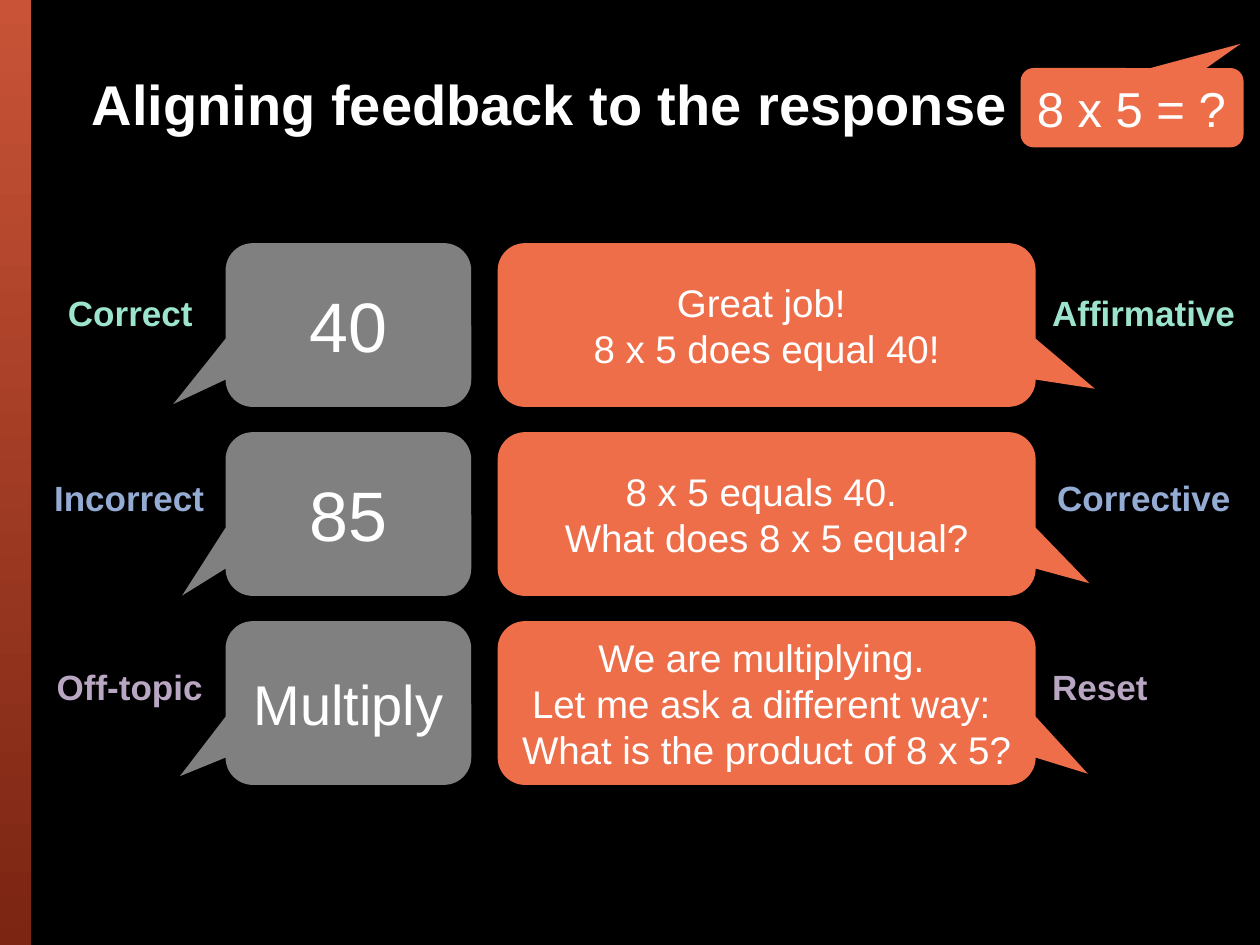
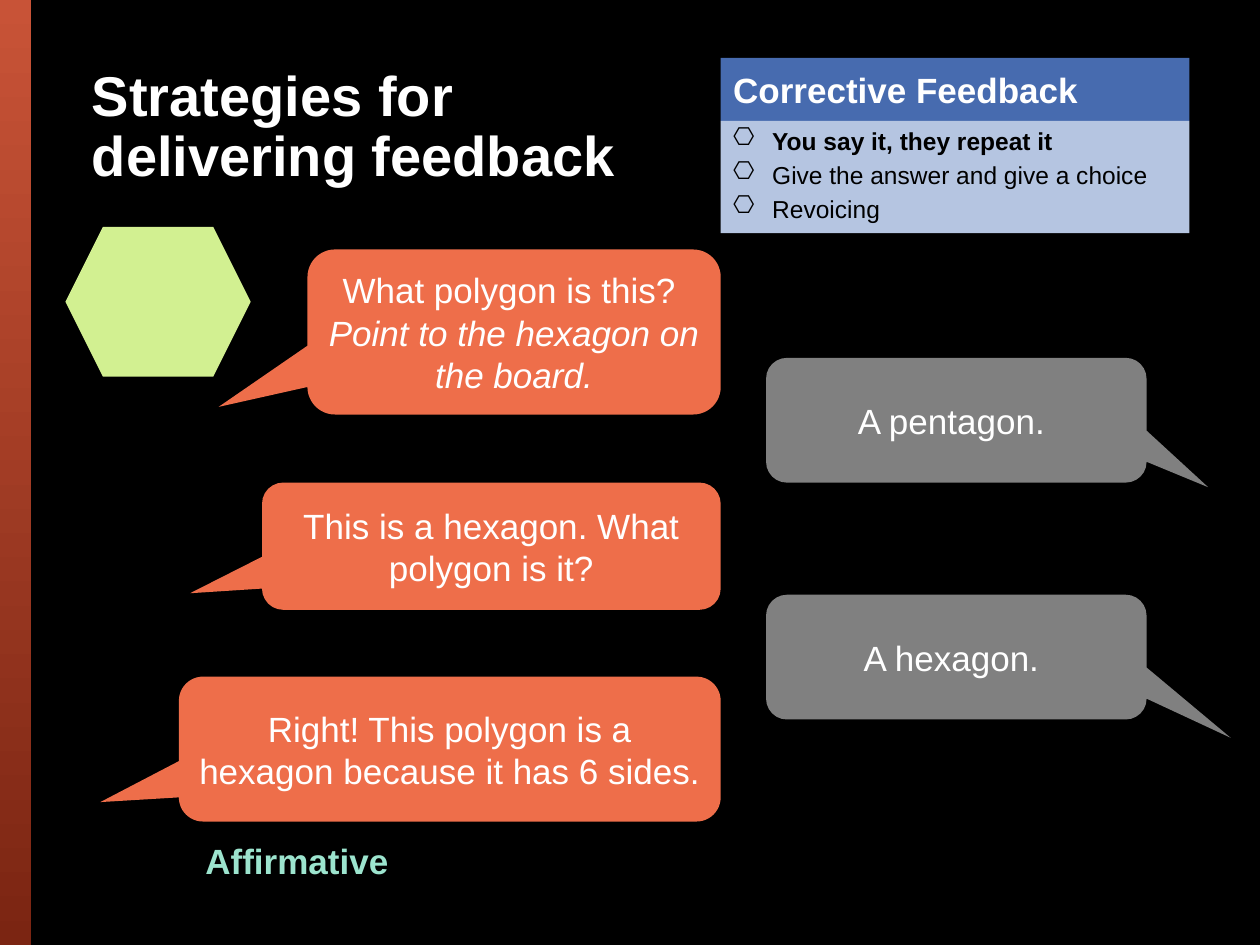
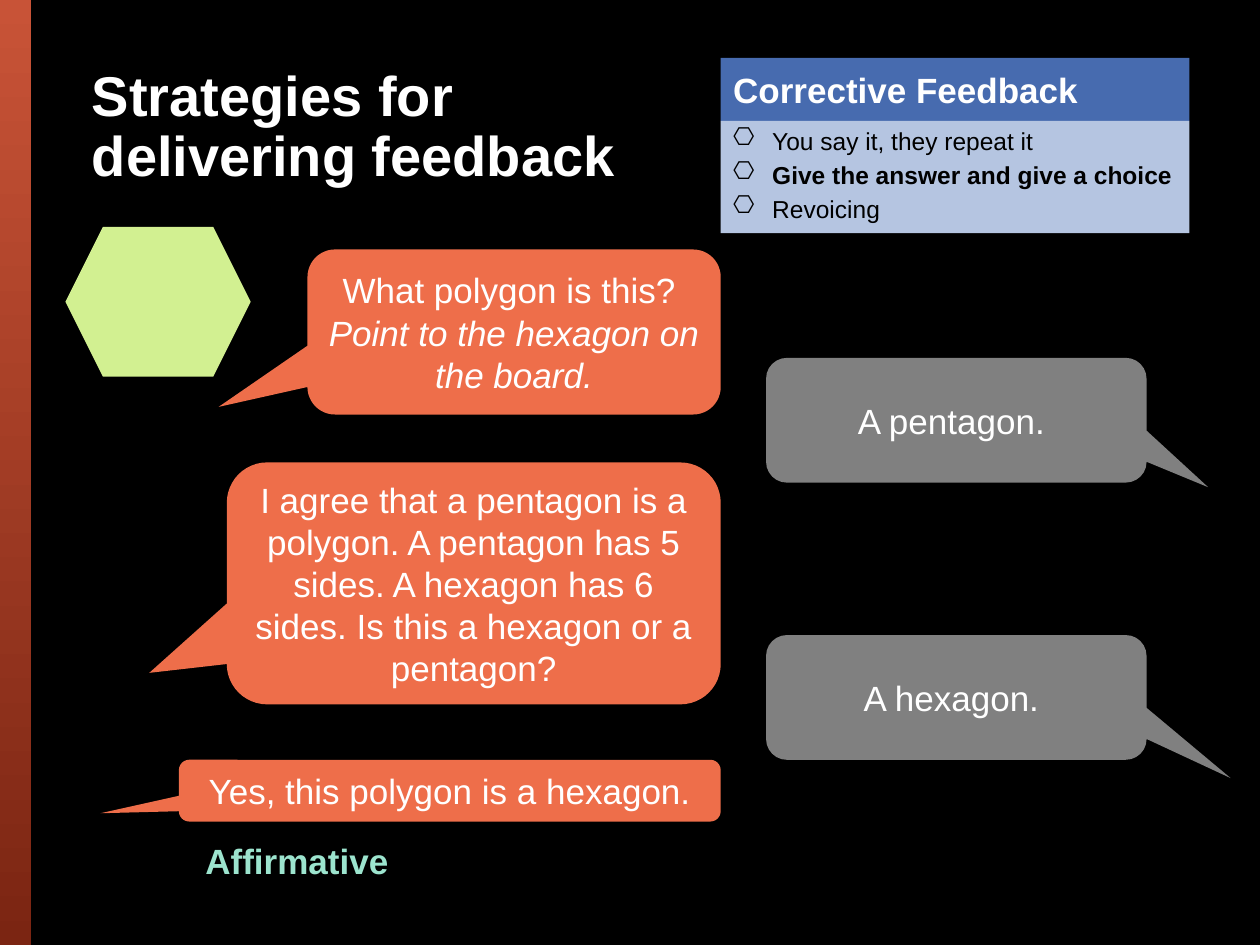
from pptx import Presentation
from pptx.dml.color import RGBColor
from pptx.enum import shapes, text
from pptx.util import Inches, Pt
from lxml import etree

FONT = "Arial"
BLACK, WHITE, GREY = "000000", "FFFFFF", "808080"
CORAL, LIME = "EE6E4A", "D2F091"
MINT, BLUE, LILAC = "9CE4CE", "94ABD4", "B8A6C2"
NAVY, PALE = "476BAF", "B5C5E1"
LEFT, MID = text.PP_ALIGN.LEFT, text.PP_ALIGN.CENTER
CALL = shapes.MSO_SHAPE.ROUNDED_RECTANGULAR_CALLOUT
RECT = shapes.MSO_SHAPE.RECTANGLE
rgb = RGBColor.from_string


def write(frame, words, size=20, color=WHITE, bold=(), italic=(), align=MID,
          space=None, before=0, bullet=None):
    """Fill a frame, one paragraph a line; bold and italic hold line numbers."""
    frame.word_wrap = True
    frame.auto_size = text.MSO_AUTO_SIZE.NONE
    frame.vertical_anchor = text.MSO_ANCHOR.MIDDLE
    for i, line in enumerate(words.split("\n")):
        para = frame.paragraphs[0] if i == 0 else frame.add_paragraph()
        if bullet:
            props = para._p.get_or_add_pPr()
            props.set("marL", str(Inches(0.31)))
            props.set("indent", str(-Inches(0.31)))
            tag = props.nsmap["a"]
            etree.SubElement(props, f"{{{tag}}}buChar", char=bullet)
        para.alignment = align
        if space:
            para.line_spacing = space
        if i and before:
            para.space_before = Pt(before)
        run = para.add_run()
        run.text = line
        font = run.font
        font.name, font.size = FONT, Pt(size)
        font.bold, font.italic = i in bold, i in italic
        font.color.rgb = rgb(color)


def draw(slide, kind, box, fill, words="", tip=(), **form):
    """Add a flat shape; tip is where a callout points."""
    shape = slide.shapes.add_shape(kind, *map(Inches, box))
    shape.shadow.inherit = False
    shape.fill.solid()
    shape.fill.fore_color.rgb = rgb(fill)
    shape.line.fill.background()
    for i, value in enumerate(tip):
        shape.adjustments[i] = value
    if words:
        write(shape.text_frame, words, **form)
    return shape


prs = Presentation()
prs.slide_width, prs.slide_height = Inches(10), Inches(7.5)
back = prs.slide_master.background.fill
back.solid()
back.fore_color.rgb = rgb(BLACK)

# Slides with the side band and title
heads = [
    ("Aligning feedback to the response", 8.95, 1),
    ("Strategies for delivering feedback", 5.09, 1.34),
    ("Strategies for delivering feedback", 5.09, 1.34),
]
pages = []
for words, wide, high in heads:
    page = prs.slides.add_slide(prs.slide_layouts[5])
    band = draw(page, RECT, (0, 0, 0.25, 7.5), CORAL)
    band.fill.gradient()
    band.fill.gradient_angle = 270
    for stop, color in zip(band.fill.gradient_stops, ("C85337", "7B2512")):
        stop.color.rgb = rgb(color)
    title = page.shapes.title
    title.left, title.top = Inches(0.63), Inches(0.35)
    title.width, title.height = Inches(wide), Inches(high)
    write(title.text_frame, words, size=32, bold={0}, align=LEFT, space=0.9)
    pages.append(page)

# Labels: page, place, text, colour
labels = [
    (0, (0.33, 2.25, 1.6), "Correct", MINT),
    (0, (0.22, 3.72, 1.6), "Incorrect", BLUE),
    (0, (0.24, 5.22, 1.6), "Off-topic", LILAC),
    (0, (8.14, 2.25, 1.86), "Affirmative", MINT),
    (0, (8.18, 3.72, 1.82), "Corrective", BLUE),
    (0, (8.14, 5.22, 1.86), "Reset", LILAC),
    (1, (1.42, 6.6, 1.92), "Affirmative", MINT),
    (2, (1.42, 6.6, 1.92), "Affirmative", MINT),
]
for num, (left, top, wide), words, color in labels:
    box = pages[num].shapes.add_textbox(*map(Inches, (left, top, wide, 0.5)))
    frame = box.text_frame
    frame.margin_left = Inches(0.21)
    frame.margin_right = frame.margin_top = frame.margin_bottom = 0
    write(frame, words, color=color, bold={0}, align=LEFT, space=0.9)

# Slide 1: the question, then answers with their feedback
ask = draw(pages[0], CALL, (8.1, 0.54, 1.77, 0.63), CORAL, "8 x 5 = ?",
           (0.487, -0.805), size=28, align=LEFT)
ask.text_frame.word_wrap = False
ask.text_frame.vertical_anchor = text.MSO_ANCHOR.TOP
rows = [
    ("40", 40, (-0.713, 0.483),
     "Great job! \n8 x 5 does equal 40!", (0.61, 0.389)),
    ("85", 40, (-0.677, 0.498),
     "8 x 5 equals 40. \nWhat does 8 x 5 equal?", (0.6, 0.423)),
    ("Multiply", 32, (-0.686, 0.447),
     "We are multiplying. \nLet me ask a different way: \n"
     "What is the product of 8 x 5?", (0.597, 0.432)),
]
for i, (said, size, tip, reply, aim) in enumerate(rows):
    top = 1.93 + 1.5 * i
    draw(pages[0], CALL, (1.79, top, 1.95, 1.3), GREY, said, tip, size=size)
    draw(pages[0], CALL, (3.95, top, 4.27, 1.3), CORAL, reply, aim, size=22)

# Slides 2 and 3: the strategy in bold, the retry, second answer, praise
talks = [
    ((2.08, 3.83, 3.64, 1.01), "This is a hexagon. What polygon is it?", 4.72,
     (1.42, 5.37, 4.3, 1.15),
     "Right! This polygon is a hexagon because it has 6 sides. "),
    ((1.8, 3.67, 3.92, 1.92),
     "I agree that a pentagon is a polygon. A pentagon has 5 sides. "
     "A hexagon has 6 sides. Is this a hexagon or a pentagon?", 5.04,
     (1.42, 6.03, 4.3, 0.49), "Yes, this polygon is a hexagon."),
]
for i, (page, talk) in enumerate(zip(pages[1:], talks)):
    retry, hint, top, last, praise = talk
    # Strategy panel
    draw(page, RECT, (5.72, 0.46, 3.72, 0.5), NAVY, "Corrective Feedback",
         bold={0}, align=LEFT)
    draw(page, RECT, (5.72, 0.96, 3.72, 0.89), PALE,
         "You say it, they repeat it\nGive the answer and give a choice\n"
         "Revoicing", size=14, color=BLACK, bold={i}, align=LEFT,
         space=0.8, before=6, bullet="⎔")
    # Dialogue
    draw(page, shapes.MSO_SHAPE.HEXAGON, (0.52, 1.8, 1.47, 1.19), LIME)
    draw(page, CALL, (2.44, 1.98, 3.28, 1.31), CORAL,
         "What polygon is this? \nPoint to the hexagon on the board.",
         (-0.715, 0.454), italic={1})
    draw(page, CALL, (6.08, 2.84, 3.02, 0.99), GREY, "A pentagon. ",
         (0.662, 0.537))
    draw(page, CALL, retry, CORAL, hint, (-0.657, 0.37))
    draw(page, CALL, (6.08, top, 3.02, 0.99), GREY, "A hexagon. ",
         (0.721, 0.647))
    draw(page, CALL, last, CORAL, praise, (-0.645, 0.366))

prs.save("out.pptx")
